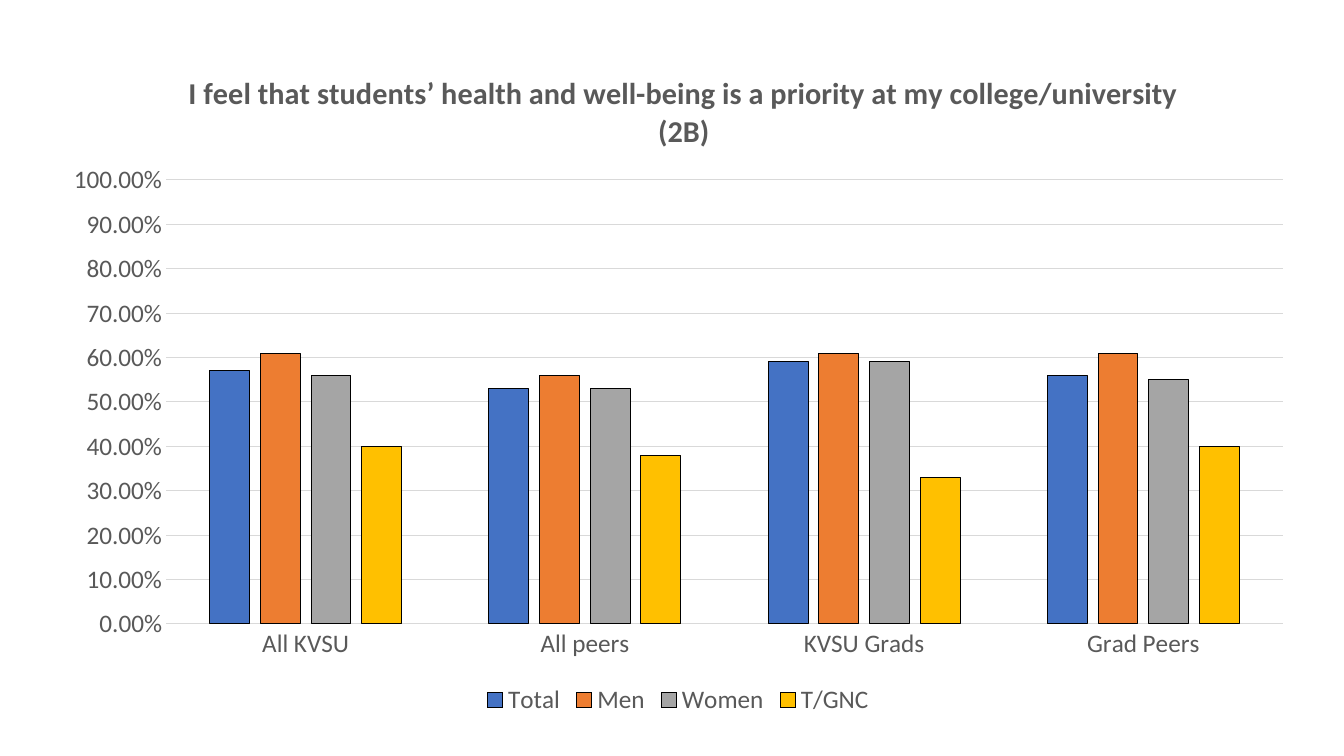
import pptx
import pptx.chart.data
import pptx.dml.color
import pptx.enum.chart
import pptx.oxml
import pptx.oxml.ns
import pptx.util

PX = 914400 / 100.8
COLORS = {
    "text": "595959", "grid": "D9D9D9", "outline": "000000",
    "Total": "4472C4", "Men": "ED7D31", "Women": "A5A5A5", "T/GNC": "FFC000",
}
FONT = "Calibri"
TITLE = "I feel that students’ health and well-being is a priority at my college/university (2B)"
CATEGORIES = ["All KVSU", "All peers", "KVSU Grads", "Grad Peers"]
SERIES = {
    "Total": [0.57, 0.53, 0.59, 0.56],
    "Men": [0.61, 0.56, 0.61, 0.61],
    "Women": [0.56, 0.53, 0.59, 0.55],
    "T/GNC": [0.4, 0.38, 0.33, 0.4],
}


def px(n):
    return pptx.util.Emu(round(n * PX))


def rgb(name):
    return pptx.dml.color.RGBColor.from_string(COLORS[name])


def style_font(font, size=18, bold=False, color="text"):
    font.name, font.size, font.bold = FONT, pptx.util.Pt(size), bold
    font.color.rgb = rgb(color)


def add_text(tf, text, **fmt):
    r = tf.paragraphs[0].add_run()
    r.text = text
    style_font(r.font, **fmt)


def style_line(line, color):
    line.color.rgb = rgb(color)
    line.width = pptx.util.Pt(0.75)


def set_layout(parent, index, box, **place):
    """Place a chart part; place holds px within the chart box."""
    qn = pptx.oxml.ns.qn
    for old in parent.findall(qn("c:layout")):
        parent.remove(old)
    sizes = {"x": box[2], "w": box[2], "y": box[3], "h": box[3]}
    target = '<c:layoutTarget val="inner"/>' if "w" in place else ""
    modes = "".join(f'<c:{k}Mode val="edge"/>' for k in "xy")
    values = "".join(f'<c:{k} val="{v / sizes[k]:.4f}"/>' for k, v in place.items())
    parent.insert(index, pptx.oxml.parse_xml(
        f'<c:layout {pptx.oxml.ns.nsdecls("c")}><c:manualLayout>'
        f'{target}{modes}{values}</c:manualLayout></c:layout>'))


def add_survey_chart(slide, box):
    data = pptx.chart.data.CategoryChartData(number_format="0.00%")
    data.categories = CATEGORIES
    for name, values in SERIES.items():
        data.add_series(name, values)
    kind = pptx.enum.chart.XL_CHART_TYPE.COLUMN_CLUSTERED
    chart = slide.shapes.add_chart(kind, *map(px, box), data).chart
    style_font(chart.font)

    # Title
    chart.has_title = True
    tf = chart.chart_title.text_frame
    add_text(tf, TITLE, size=21.6, bold=True)
    set_layout(chart.chart_title._element, 1, box, x=135, y=28)

    # Columns
    plot = chart.plots[0]
    plot.gap_width, plot.overlap, plot.vary_by_categories = 219, -27, False
    for series in plot.series:
        series.format.fill.solid()
        series.format.fill.fore_color.rgb = rgb(series.name)
        style_line(series.format.line, "outline")
    set_layout(chart._chartSpace.chart.plotArea, 0, box, x=118, y=142, w=1117, h=444)

    # Axes
    for axis in (chart.category_axis, chart.value_axis):
        axis.major_tick_mark = axis.minor_tick_mark = pptx.enum.chart.XL_TICK_MARK.NONE
        style_font(axis.tick_labels.font)
    style_line(chart.category_axis.format.line, "grid")
    axis = chart.value_axis
    axis.minimum_scale, axis.maximum_scale, axis.major_unit = 0, 1, 0.1
    axis.format.line.fill.background()
    axis.has_major_gridlines = True
    style_line(axis.major_gridlines.format.line, "grid")
    axis.tick_labels.number_format = "0.00%"
    axis.tick_labels.number_format_is_linked = False

    # Legend
    chart.has_legend = True
    chart.legend.position = pptx.enum.chart.XL_LEGEND_POSITION.BOTTOM
    chart.legend.include_in_layout = False
    style_font(chart.legend.font)


def main():
    prs = pptx.Presentation()
    prs.slide_width, prs.slide_height = px(1344), px(756)
    slide = prs.slides.add_slide(prs.slide_layouts[6])
    add_survey_chart(slide, (48, 38, 1260, 682))
    prs.save("out.pptx")


if __name__ == "__main__":
    main()
